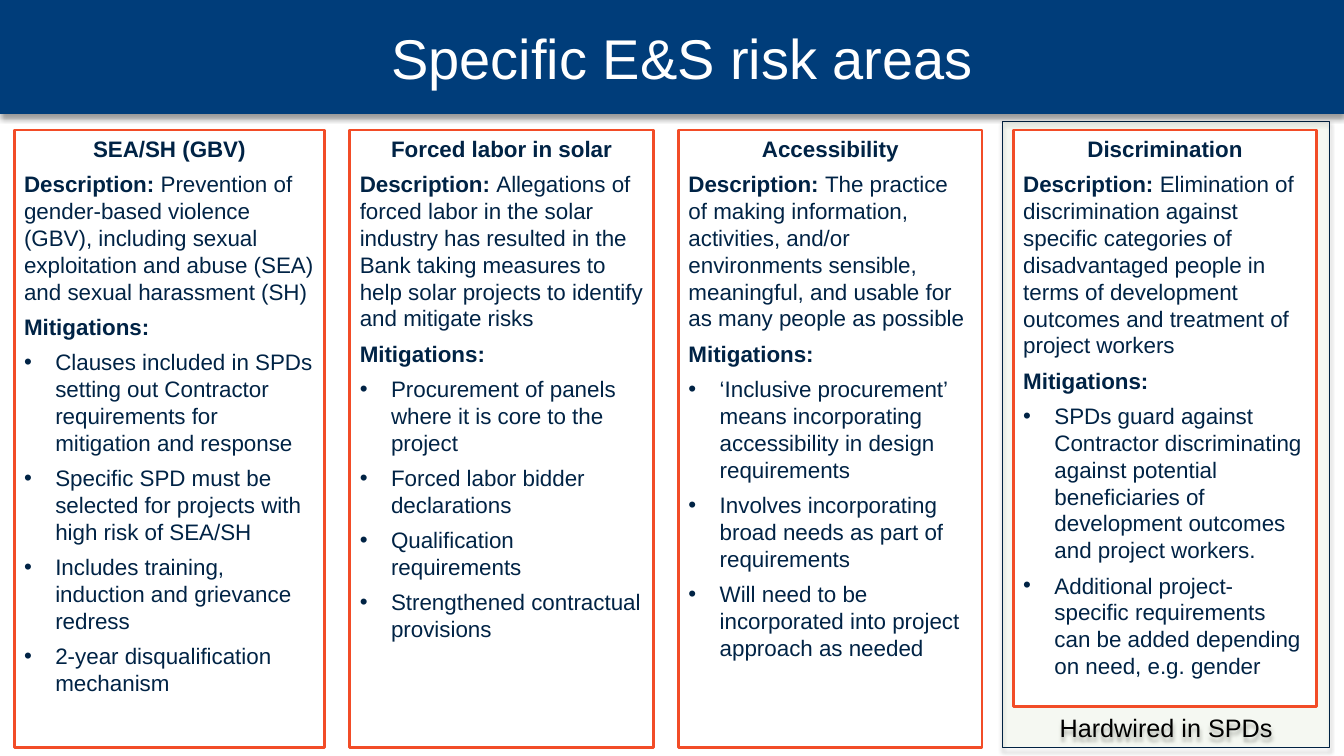
from lxml import etree
from pptx import Presentation
from pptx.dml.color import RGBColor
from pptx.enum.shapes import MSO_SHAPE as Preset
from pptx.enum.text import MSO_ANCHOR as Anchor, PP_ALIGN as Align
from pptx.oxml.ns import qn
from pptx.util import Inches, Pt

NAVY = RGBColor(0x00, 0x3D, 0x7A)
INK = RGBColor(0x00, 0x23, 0x45)
FRAME = RGBColor(0x00, 0x22, 0x43)
ORANGE = RGBColor(0xF2, 0x4C, 0x27)
GREEN = RGBColor(0x92, 0xD0, 0x50)
WHITE = RGBColor(0xFF, 0xFF, 0xFF)
BLACK = RGBColor(0x00, 0x00, 0x00)

FONT = "Arial"
BULLET_INDENT = Inches(0.31)
COLUMN_TOP = 1.29

COLUMNS = [
    ((0.14, COLUMN_TOP, 3.08, 6.13), "SEA/SH (GBV)",
     "Prevention of gender-based violence (GBV), including sexual exploitation "
     "and abuse (SEA) and sexual harassment (SH)",
     ["Clauses included in SPDs setting out Contractor requirements for "
      "mitigation and response",
      "Specific SPD must be selected for projects with high risk of SEA/SH",
      "Includes training, induction and grievance redress",
      "2-year disqualification mechanism"]),
    ((3.47, COLUMN_TOP, 3.01, 6.13), "Forced labor in solar",
     "Allegations of forced labor in the solar industry has resulted in the Bank "
     "taking measures to help solar projects to identify and mitigate risks",
     ["Procurement of panels where it is core to the project",
      "Forced labor bidder declarations",
      "Qualification requirements",
      "Strengthened contractual provisions"]),
    ((6.73, COLUMN_TOP, 3.01, 6.13), "Accessibility",
     "The practice of making information, activities, and/or environments "
     "sensible, meaningful, and usable for as many people as possible",
     ["‘Inclusive procurement’ means incorporating accessibility in design "
      "requirements",
      "Involves incorporating broad needs as part of requirements",
      "Will need to be incorporated into project approach as needed"]),
    ((10.05, COLUMN_TOP, 3.01, 5.72), "Discrimination",
     "Elimination of discrimination against specific categories of disadvantaged "
     "people in terms of development outcomes and treatment of project workers",
     ["SPDs guard against Contractor discriminating against potential "
      "beneficiaries of development outcomes and project workers.",
      "Additional project-specific requirements can be added depending on need, "
      "e.g. gender"]),
]


def add_panel(slide, box, fill, line=None, line_width=1, anchor=Anchor.TOP):
    shape = slide.shapes.add_shape(Preset.RECTANGLE, *map(Inches, box))
    shape.shadow.inherit = False
    shape.fill.solid()
    shape.fill.fore_color.rgb = fill
    if line is None:
        shape.line.fill.background()
    else:
        shape.line.color.rgb = line
        shape.line.width = Pt(line_width)
    shape.text_frame.word_wrap = True
    shape.text_frame.vertical_anchor = anchor
    return shape


def add_shadow(shape, opacity, blur, distance):
    effects = shape.element.spPr.find(qn("a:effectLst"))
    shadow = etree.SubElement(effects, qn("a:outerShdw"), blurRad=str(Pt(blur)),
                              dist=str(Pt(distance)), dir="5400000",
                              rotWithShape="0")
    color = etree.SubElement(shadow, qn("a:srgbClr"), val=str(BLACK))
    etree.SubElement(color, qn("a:alpha"), val=str(opacity * 1000))


def set_opacity(shape, percent):
    color = shape.element.spPr.find(qn("a:solidFill")).find(qn("a:srgbClr"))
    etree.SubElement(color, qn("a:alpha"), val=str(percent * 1000))


def add_text(paragraph, text, size=16, color=INK, bold=False, align=Align.LEFT):
    paragraph.alignment = align
    run = paragraph.add_run()
    run.text = text
    run.font.name = FONT
    run.font.size = Pt(size)
    run.font.bold = bold
    run.font.color.rgb = color


def add_bullet(paragraph):
    properties = paragraph._p.get_or_add_pPr()
    properties.set("marL", str(BULLET_INDENT))
    properties.set("indent", str(-BULLET_INDENT))
    etree.SubElement(properties, qn("a:buFont"), typeface=FONT)
    etree.SubElement(properties, qn("a:buChar"), char="•")


def add_hardwired_frame(slide, box):
    shape = add_panel(slide, box, GREEN, FRAME, 0.75, Anchor.BOTTOM)
    set_opacity(shape, 5)
    add_shadow(shape, 35, 3.1, 1.8)
    add_text(shape.text_frame.paragraphs[0], "Hardwired in SPDs",
             size=18, color=BLACK, align=Align.CENTER)


def add_title_band(slide, box):
    shape = add_panel(slide, box, NAVY, anchor=Anchor.MIDDLE)
    shape.text_frame.margin_left = Inches(0.3)
    add_shadow(shape, 40, 4, 3)
    add_text(shape.text_frame.paragraphs[0], "Specific E&S risk areas",
             size=40, color=WHITE, align=Align.CENTER)


def add_risk_column(slide, box, heading, description, mitigations):
    frame = add_panel(slide, box, WHITE, ORANGE, 2).text_frame
    add_text(frame.paragraphs[0], heading, bold=True, align=Align.CENTER)
    paragraph = frame.add_paragraph()
    add_text(paragraph, "Description: ", bold=True)
    add_text(paragraph, description)
    add_text(frame.add_paragraph(), "Mitigations:", bold=True)
    for mitigation in mitigations:
        paragraph = frame.add_paragraph()
        add_bullet(paragraph)
        add_text(paragraph, mitigation)
    for paragraph in frame.paragraphs:
        paragraph.space_after = Pt(6)


def main():
    presentation = Presentation()
    presentation.slide_width = Inches(13.33)
    presentation.slide_height = Inches(7.5)
    slide = presentation.slides.add_slide(presentation.slide_layouts[6])
    add_hardwired_frame(slide, (9.94, 1.21, 3.25, 6.21))
    add_title_band(slide, (0, 0, 13.33, 1.13))
    for column in COLUMNS:
        add_risk_column(slide, *column)
    presentation.save("out.pptx")


if __name__ == "__main__":
    main()
